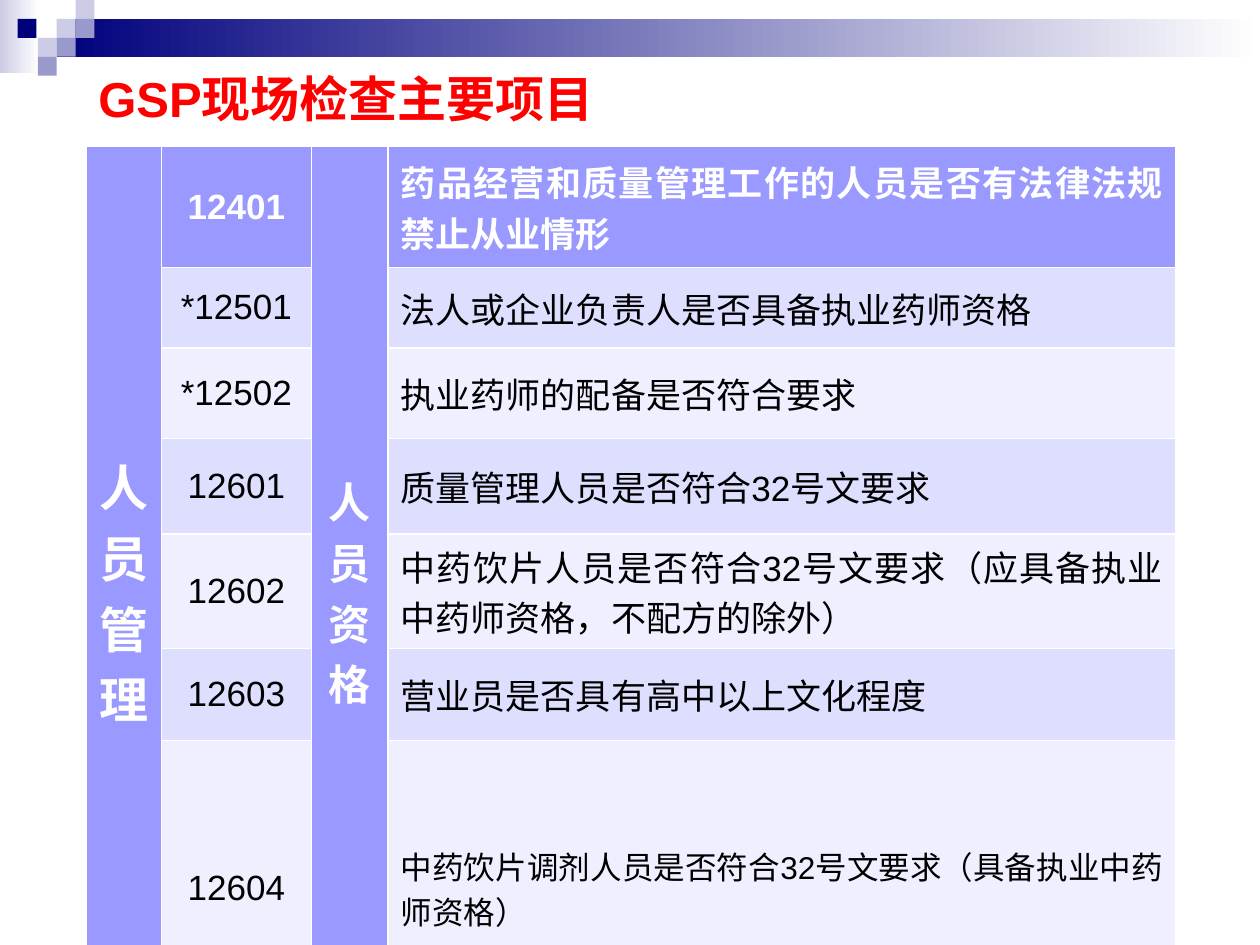
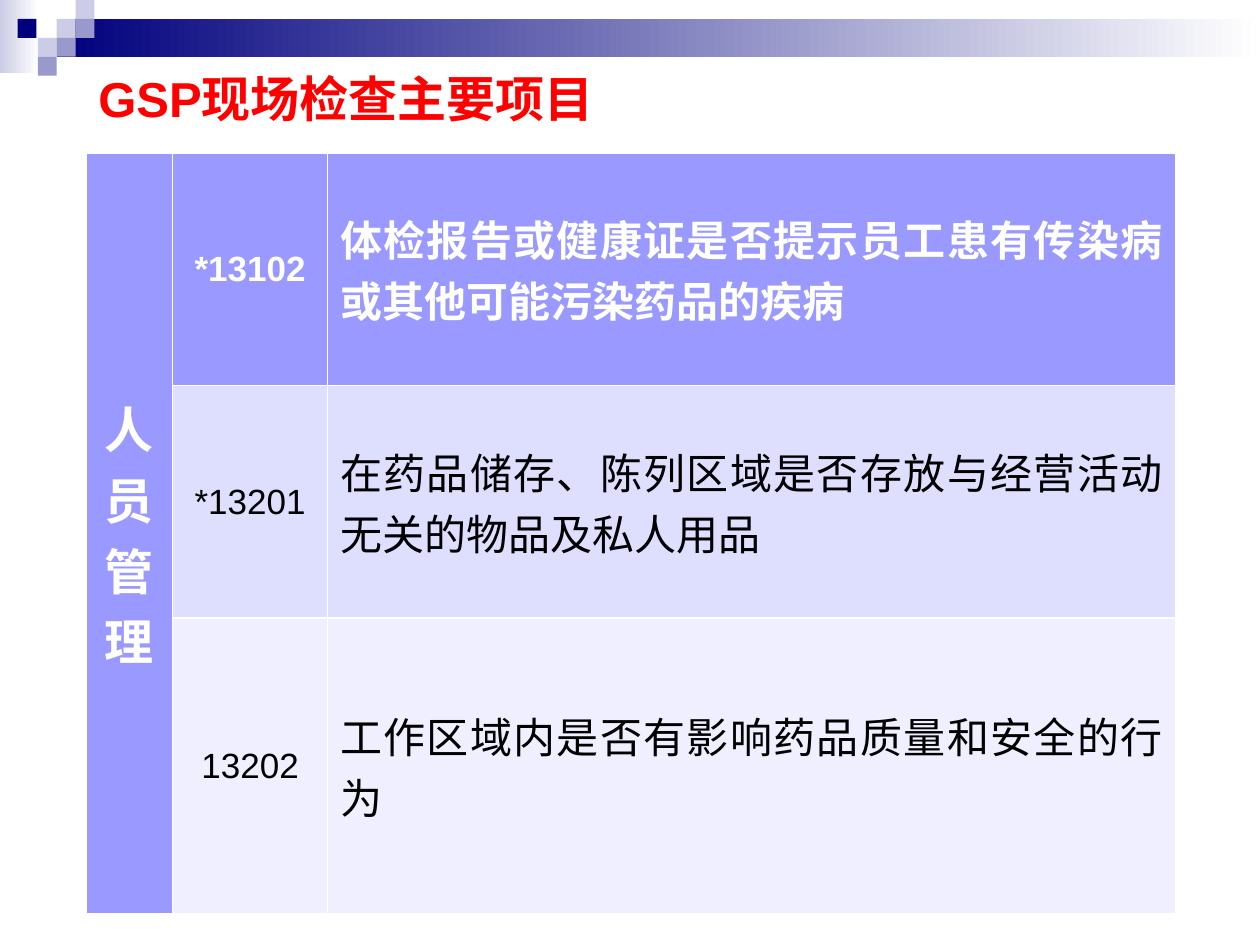
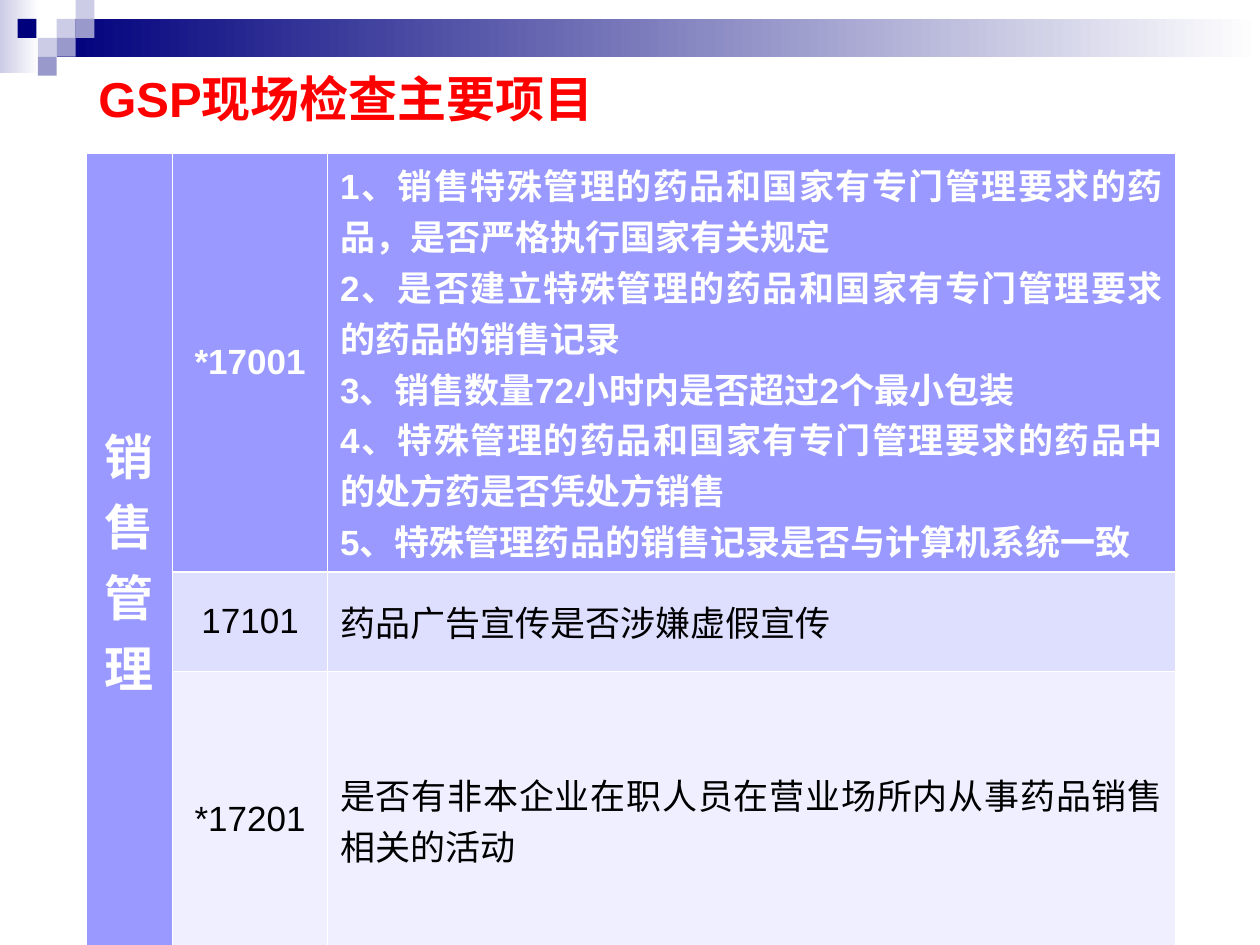
from pptx import Presentation
from pptx.dml.color import RGBColor
from pptx.enum import shapes, text
from pptx.util import Pt

TITLE = "GSP现场检查主要项目"
FONT = "Arial"
COLORS = {
    "navy": "00007D", "mist": "CCCCE6", "slate": "9999CC", "white": "FFFFFF",
    "title": "FF0000", "header": "9999FF", "odd": "DEDEFF", "even": "EFEFFF",
    "body": "000000",
}

TILE = 10.8
TILE_COLUMNS = (10, 21.6, 32.4, 43.2)
TILES = [
    (2, 1, "mist"), (3, 0, "mist"), (3, 1, "slate"), (1, 2, "mist"),
    (0, 1, "navy"), (2, 2, "slate"), (1, 3, "slate"),
]
FADES = [
    ((0, 0, 22.3, 41.8), "mist"),
    ((32.4, TILE, 687.6, 2 * TILE), "navy"),
]
LEFT, WIDTH = 49, 622.8
TITLE_BOX = (LEFT, 36, WIDTH, 39.6)
CODE_SIZE = 20
WIDE_COLUMNS = (49.7, 88.5, 484.6)

CHECKLISTS = [
    {
        "top": 83.7,
        "columns": (43.2, 85.7, 43.9, 450),
        "groups": {0: ("人员管理", 28), 2: ("人员资格", 24)},
        "items": [
            (69.1, "12401", ["药品经营和质量管理工作的人员是否有法律法规禁止从业情形"], 20),
            (46.1, "*12501", ["法人或企业负责人是否具备执业药师资格"], 20),
            (51.8, "*12502", ["执业药师的配备是否符合要求"], 20),
            (54.5, "12601", ["质量管理人员是否符合32号文要求"], 20),
            (64.4, "12602", ["中药饮片人员是否符合32号文要求（应具备执业中药师资格，不配方的除外）"], 20),
            (52.6, "12603", ["营业员是否具有高中以上文化程度"], 20),
            (70.6, "12604", ["中药饮片调剂人员是否符合32号文要求（具备执业中药师资格）"], 18),
        ],
    },
    {
        "top": 87.3,
        "columns": WIDE_COLUMNS,
        "groups": {0: ("人员管理", 28)},
        "items": [
            (133, "*13102", ["体检报告或健康证是否提示员工患有传染病或其他可能污染药品的疾病"], 24),
            (133, "*13201", ["在药品储存、陈列区域是否存放与经营活动无关的物品及私人用品"], 24),
            (133, "13202", ["工作区域内是否有影响药品质量和安全的行为"], 24),
        ],
    },
    {
        "top": 87.3,
        "columns": WIDE_COLUMNS,
        "groups": {0: ("销售管理", 28)},
        "items": [
            (206.6, "*17001", [
                "1、销售特殊管理的药品和国家有专门管理要求的药品，是否严格执行国家有关规定",
                "2、是否建立特殊管理的药品和国家有专门管理要求的药品的销售记录",
                "3、销售数量72小时内是否超过2个最小包装",
                "4、特殊管理的药品和国家有专门管理要求的药品中的处方药是否凭处方销售",
                "5、特殊管理药品的销售记录是否与计算机系统一致",
            ], 20),
            (56.9, "17101", ["药品广告宣传是否涉嫌虚假宣传"], 20),
            (59.8, "*17201", ["是否有非本企业在职人员在营业场所内从事药品销售相关的活动"], 20),
        ],
    },
]


def rgb(key):
    return RGBColor.from_string(COLORS[key])


def style(paragraph, size, color, bold):
    paragraph.font.name = FONT
    paragraph.font.size = Pt(size)
    paragraph.font.bold = bold
    paragraph.font.color.rgb = rgb(color)


def add_rect(slide, box):
    rect = slide.shapes.add_shape(shapes.MSO_SHAPE.RECTANGLE, *map(Pt, box))
    rect.shadow.inherit = False
    rect.line.fill.background()
    return rect


def decorate(layout, slide):
    for placeholder in list(layout.placeholders):
        if placeholder.placeholder_format.type != shapes.PP_PLACEHOLDER.TITLE:
            layout.shapes.element.remove(placeholder.element)
    parts = []
    for box, color in FADES:
        fade = add_rect(slide, box)
        fade.fill.gradient()
        fade.fill.gradient_angle = 0
        for stop, key in zip(fade.fill.gradient_stops, (color, "white")):
            stop.color.rgb = rgb(key)
        parts.append(fade)
    for column, row, color in TILES:
        tile = add_rect(slide, (TILE_COLUMNS[column], row * TILE, TILE, TILE))
        tile.fill.solid()
        tile.fill.fore_color.rgb = rgb(color)
        parts.append(tile)
    for part in parts:
        layout.shapes.element.append(part.element)


def add_title(slide):
    title = slide.shapes.title
    title.left, title.top, title.width, title.height = map(Pt, TITLE_BOX)
    frame = title.text_frame
    frame.text = TITLE
    frame.auto_size = text.MSO_AUTO_SIZE.NONE
    frame.vertical_anchor = text.MSO_ANCHOR.MIDDLE
    frame.paragraphs[0].alignment = text.PP_ALIGN.LEFT
    style(frame.paragraphs[0], 28, "title", True)


def fill_cell(cell, lines, size, row, align):
    header = row == 0
    cell.fill.solid()
    cell.fill.fore_color.rgb = rgb("header" if header else "odd" if row % 2 else "even")
    cell.vertical_anchor = text.MSO_ANCHOR.MIDDLE
    cell.text_frame.text = "\n".join(lines)
    for paragraph in cell.text_frame.paragraphs:
        paragraph.alignment = align
        style(paragraph, size, "white" if header else "body", header)


def add_checklist(slide, checklist):
    items, columns, groups = (checklist[key] for key in ("items", "columns", "groups"))
    height = sum(item[0] for item in items)
    table = slide.shapes.add_table(
        len(items), len(columns), Pt(LEFT), Pt(checklist["top"]), Pt(WIDTH), Pt(height)
    ).table
    for column, width in zip(table.columns, columns):
        column.width = Pt(width)
    for row, (row_height, code, questions, size) in enumerate(items):
        table.rows[row].height = Pt(row_height)
        fill_cell(table.cell(row, 1), [code], CODE_SIZE, row, text.PP_ALIGN.CENTER)
        fill_cell(table.cell(row, len(columns) - 1), questions, size, row, text.PP_ALIGN.JUSTIFY)
    for column, (group, size) in groups.items():
        table.cell(0, column).merge(table.cell(len(items) - 1, column))
        fill_cell(table.cell(0, column), [group], size, 0, text.PP_ALIGN.CENTER)


def main():
    deck = Presentation()
    deck.slide_width, deck.slide_height = Pt(720), Pt(540)
    layout = deck.slide_layouts[5]
    for number, checklist in enumerate(CHECKLISTS):
        slide = deck.slides.add_slide(layout)
        if number == 0:
            decorate(layout, slide)
        add_title(slide)
        add_checklist(slide, checklist)
    deck.save("out.pptx")


if __name__ == "__main__":
    main()
